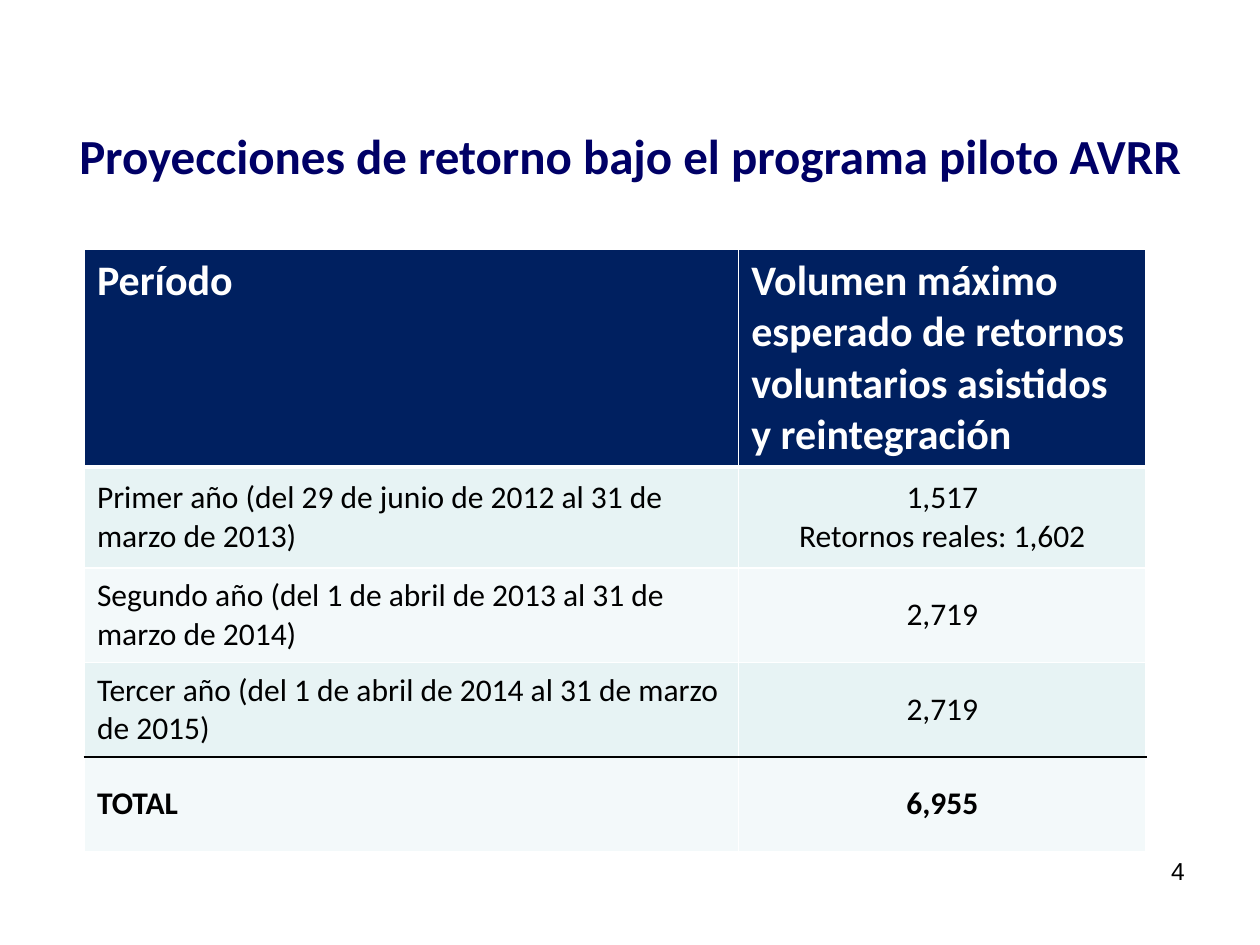
from dataclasses import dataclass

from lxml.etree import SubElement
from pptx import Presentation
from pptx.dml.color import RGBColor
from pptx.enum.text import MSO_ANCHOR as Anchor, PP_ALIGN as Align
from pptx.oxml.ns import qn
from pptx.util import Pt


@dataclass(frozen=True)
class Theme:
    heading_font: str = "Calibri"
    number_font: str = "Arial"
    title_color: str = "000066"
    header_fill: str = "002060"
    bands: tuple = ("E7F3F4", "F3F9FA")
    white: str = "FFFFFF"
    black: str = "000000"
    title_size: int = 28
    header_size: int = 24
    body_size: int = 18
    number_size: int = 14


class SlideBuilder:
    """Hold the theme and the current slide, and add each kind of element."""

    def __init__(self, presentation, theme):
        self.theme = theme
        self.slide = presentation.slides.add_slide(presentation.slide_layouts[5])

    def apply_values(self, target, values):
        for name, value in values.items():
            setattr(target, name, value)

    def fill_text(self, frame, text, size, color, bold=False, align=Align.LEFT, font=None):
        frame.text = text
        for paragraph in frame.paragraphs:
            paragraph.alignment = align
            self.apply_values(paragraph.font, {
                "name": font or self.theme.heading_font, "size": Pt(size), "bold": bold})
            paragraph.font.color.rgb = RGBColor.from_string(color)

    def place(self, shape, left, top, width, height):
        self.apply_values(shape, {"left": Pt(left), "top": Pt(top),
                                  "width": Pt(width), "height": Pt(height)})

    def title(self, text, *box):
        shape = self.slide.shapes.title
        self.place(shape, *box)
        self.apply_values(shape.text_frame, {
            "word_wrap": True, "vertical_anchor": Anchor.MIDDLE,
            "margin_left": 0, "margin_right": 0})
        self.fill_text(shape.text_frame, text, self.theme.title_size,
                       self.theme.title_color, True, Align.CENTER)

    def page_number(self, text, *box):
        shape = self.slide.shapes.add_textbox(*map(Pt, box))
        shape.text_frame.word_wrap = True
        self.fill_text(shape.text_frame, text, self.theme.number_size, self.theme.black,
                       align=Align.RIGHT, font=self.theme.number_font)

    def borders(self, cell, top, bottom):
        properties = cell._tc.get_or_add_tcPr()
        sides = {"lnL": (self.theme.white, 1), "lnR": (self.theme.white, 1),
                 "lnT": top, "lnB": bottom}
        for index, (side, (color, width)) in enumerate(sides.items()):
            line = SubElement(properties, qn(f"a:{side}"), w=str(Pt(width)))
            fill = SubElement(line, qn("a:solidFill"))
            SubElement(fill, qn("a:srgbClr"), val=color)
            properties.insert(index, line)

    def table(self, rows, left, top, widths, heights):
        theme = self.theme
        table = self.slide.shapes.add_table(
            len(rows), len(widths), Pt(left), Pt(top),
            Pt(sum(widths)), Pt(sum(heights))).table
        for column, width in zip(table.columns, widths):
            column.width = Pt(width)
        for row, height in zip(table.rows, heights):
            row.height = Pt(height)
        thin, thick, rule = (theme.white, 1), (theme.white, 3), (theme.black, 1)
        edges = [thin, thick] + [thin] * (len(rows) - 3) + [rule, thin]
        for row_index, values in enumerate(rows):
            header = row_index == 0
            total = row_index == len(rows) - 1
            fill = theme.header_fill if header else theme.bands[(row_index - 1) % 2]
            for column_index, text in enumerate(values):
                cell = table.cell(row_index, column_index)
                cell.fill.solid()
                cell.fill.fore_color.rgb = RGBColor.from_string(fill)
                cell.vertical_anchor = Anchor.TOP if header else Anchor.MIDDLE
                self.fill_text(cell.text_frame, text,
                               theme.header_size if header else theme.body_size,
                               theme.white if header else theme.black, header or total,
                               Align.CENTER if column_index and not header else Align.LEFT)
                self.borders(cell, edges[row_index], edges[row_index + 1])


def main():
    presentation = Presentation()
    presentation.slide_width, presentation.slide_height = Pt(720), Pt(540)
    builder = SlideBuilder(presentation, Theme())
    builder.title("Proyecciones de retorno bajo el programa piloto AVRR", 36, 65.5, 648, 46)
    builder.table([
        ("Período",
         "Volumen máximo esperado de retornos voluntarios asistidos y reintegración"),
        ("Primer año (del 29 de junio de 2012 al 31 de marzo de 2013)",
         "1,517\nRetornos reales: 1,602"),
        ("Segundo año (del 1 de abril de 2013 al 31 de marzo de 2014)", "2,719"),
        ("Tercer año (del 1 de abril de 2014 al 31 de marzo de 2015)", "2,719"),
        ("TOTAL", "6,955"),
    ], 48.25, 142.5, (373.9, 232.7), (122.8, 57.6, 54, 54, 54))
    builder.page_number("4", 516, 485.5, 168, 37.5)
    presentation.save("out.pptx")


if __name__ == "__main__":
    main()
